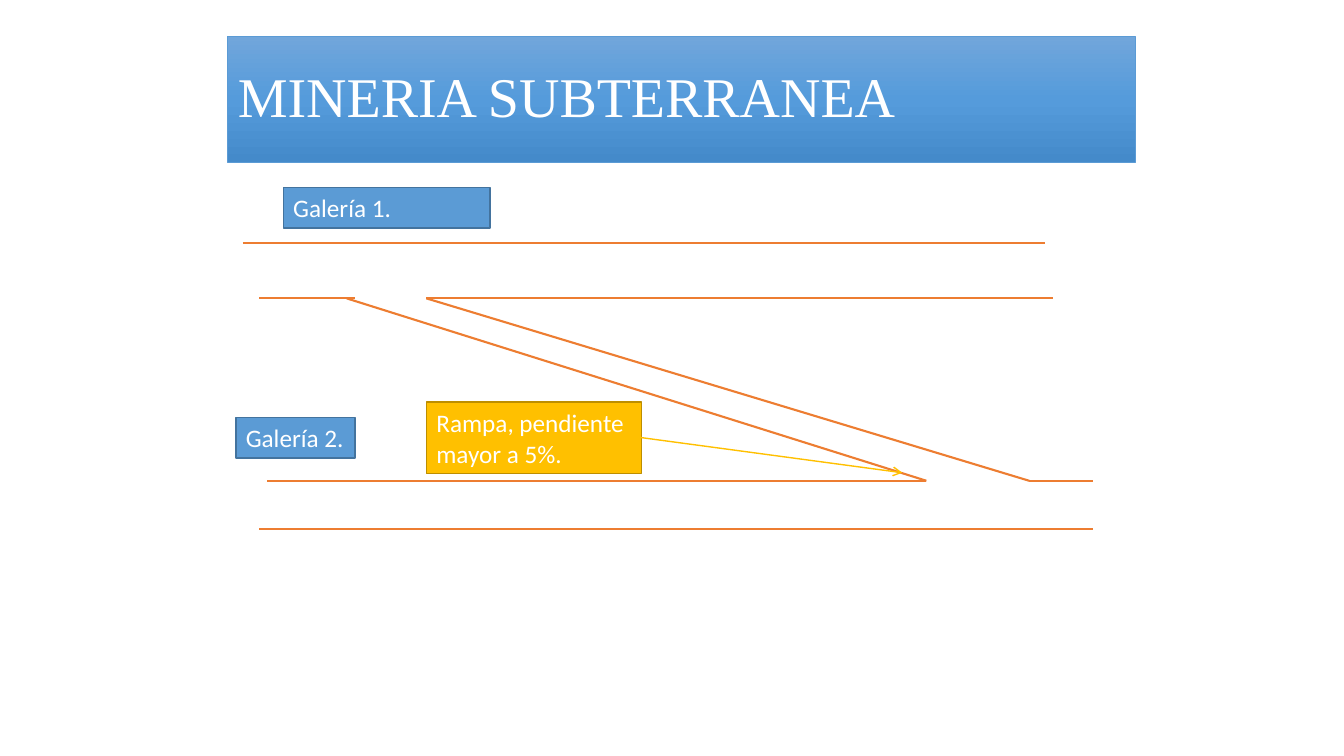
from copy import deepcopy

from pptx import Presentation
from pptx.dml.color import RGBColor
from pptx.enum.shapes import MSO_CONNECTOR, MSO_SHAPE
from pptx.enum.text import MSO_ANCHOR, MSO_AUTO_SIZE, PP_ALIGN
from pptx.oxml.ns import qn
from pptx.util import Inches, Pt
from lxml import etree

STRAIGHT = MSO_CONNECTOR.STRAIGHT
RECTANGLE = MSO_SHAPE.RECTANGLE
MIDDLE = MSO_ANCHOR.MIDDLE
LEFT = PP_ALIGN.LEFT
FIT_SHAPE = MSO_AUTO_SIZE.SHAPE_TO_FIT_TEXT
NO_FIT = MSO_AUTO_SIZE.NONE

BLUE, DARK_BLUE = "5B9BD5", "43739E"
GOLD, DARK_GOLD = "FFC000", "BD8E00"
ORANGE, WHITE = "ED7D31", "FFFFFF"
TITLE_GRADIENT = [(0, "71A6DB"), (0.5, "559BDB"), (1, "448ACA")]


def color(hex_value):
    return RGBColor.from_string(hex_value)


def write(frame, text, size=18, font="Calibri", fit=FIT_SHAPE, spacing=None):
    frame.word_wrap = True
    frame.auto_size = fit
    frame.vertical_anchor = MIDDLE
    paragraph = frame.paragraphs[0]
    paragraph.alignment = LEFT
    paragraph.line_spacing = spacing
    run = paragraph.add_run()
    run.text = text
    run.font.size = Pt(size)
    run.font.name = font
    run.font.color.rgb = color(WHITE)


class MineSlide:
    """Draws on one slide; all lengths are percentages of its width and height."""

    def __init__(self, deck):
        self.width, self.height = deck.slide_width, deck.slide_height
        self.slide = deck.slides.add_slide(deck.slide_layouts[5])

    def scale(self, x, y):
        return round(self.width * x / 100), round(self.height * y / 100)

    def outline(self, line, hex_value, weight):
        line.color.rgb = color(hex_value)
        line.width = Pt(weight)

    def title(self, text, corner, size):
        banner = self.slide.shapes.title
        banner.left, banner.top = self.scale(*corner)
        banner.width, banner.height = self.scale(*size)
        banner.fill.gradient()
        banner.fill.gradient_angle = 270
        stops = banner.fill._xPr.find(".//" + qn("a:gsLst"))
        stops.insert(1, deepcopy(stops[0]))
        for stop, (position, hex_value) in zip(banner.fill.gradient_stops, TITLE_GRADIENT):
            stop.position = position
            stop.color.rgb = color(hex_value)
        self.outline(banner.line, BLUE, 0.5)
        write(banner.text_frame, text, size=40, font="Times New Roman",
              fit=NO_FIT, spacing=0.9)

    def label(self, text, corner, size, fill=BLUE, border=DARK_BLUE):
        box = self.slide.shapes.add_shape(RECTANGLE, *self.scale(*corner), *self.scale(*size))
        box.shadow.inherit = False
        box.fill.solid()
        box.fill.fore_color.rgb = color(fill)
        self.outline(box.line, border, 1)
        write(box.text_frame, text)

    def line(self, start, end, hex_value=ORANGE, weight=1.5, arrow=False):
        connector = self.slide.shapes.add_connector(
            STRAIGHT, *self.scale(*start), *self.scale(*end))
        self.outline(connector.line, hex_value, weight)
        properties = connector._element.spPr
        etree.SubElement(properties, qn("a:effectLst"))
        if arrow:
            etree.SubElement(properties.find(qn("a:ln")), qn("a:tailEnd"), type="arrow")


def main():
    deck = Presentation()
    deck.slide_width, deck.slide_height = Inches(13.33), Inches(7.5)
    mine = MineSlide(deck)
    mine.title("MINERIA SUBTERRANEA", (16.95, 4.8), (67.5, 16.67))

    upper_roof, upper_floor, lower_roof, lower_floor = 32.13, 39.47, 63.6, 70
    ramp_top_left, ramp_top_right = 25.8, 31.73
    ramp_bottom_left, ramp_bottom_right = 68.93, 76.58
    lower_end = 81.3
    gallery_walls = [
        (upper_roof, 18.08, 77.78),
        (upper_floor, 19.28, 26.4),
        (upper_floor, ramp_top_right, 78.38),
        (lower_roof, 19.88, ramp_bottom_left),
        (lower_roof, ramp_bottom_right, lower_end),
        (lower_floor, 19.28, lower_end),
    ]
    for level, start, end in gallery_walls:
        mine.line((start, level), (end, level))
    for top, bottom in [(ramp_top_left, ramp_bottom_left),
                        (ramp_top_right, ramp_bottom_right)]:
        mine.line((top, upper_floor), (bottom, lower_roof))

    mine.label("Galería 1.", (21.08, 24.8), (15.38, 5.38))
    mine.label("Galería 2.", (17.55, 55.2), (8.88, 5.38))
    mine.label("Rampa, pendiente mayor a 5%.", (ramp_top_right, 53.2), (15.98, 9.47),
               fill=GOLD, border=DARK_GOLD)
    mine.line((47.65, 57.87), (67.13, 62.53), GOLD, weight=1, arrow=True)

    deck.save("out.pptx")


if __name__ == "__main__":
    main()
